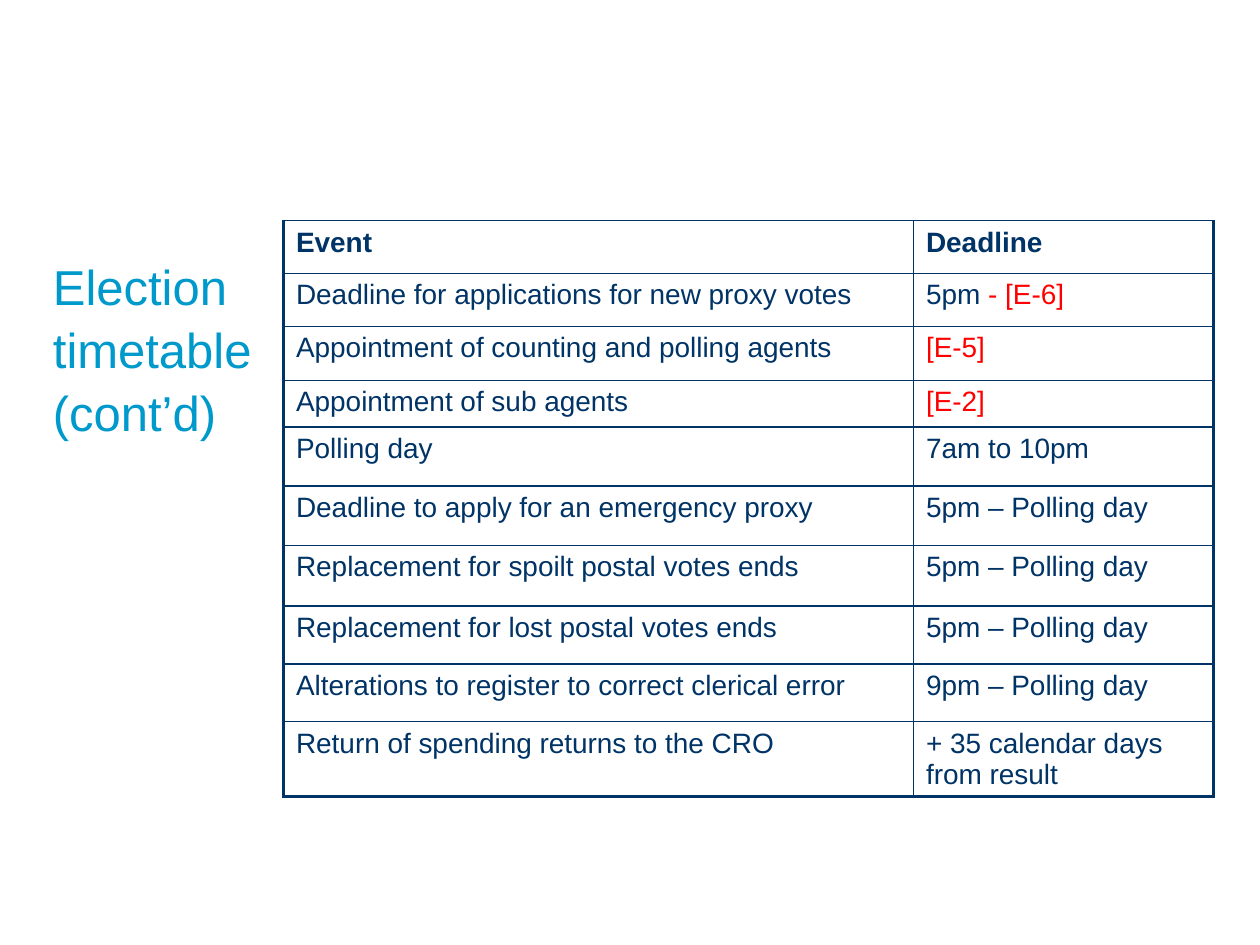
import pptx
import pptx.dml.color
import pptx.enum.text
import pptx.oxml
import pptx.oxml.ns
import pptx.util

Inches = pptx.util.Inches
Pt = pptx.util.Pt
NAVY, RED, CYAN = "003366", "FF0000", "0099CC"
COLS = [5, 2.38]
ROWS = [
    (0.42, "Event", [("Deadline", NAVY)]),
    (0.42, "Deadline for applications for new proxy votes", [("5pm ", NAVY), ("- [E-6]", RED)]),
    (0.43, "Appointment of counting and polling agents", [("[E-5]", RED)]),
    (0.37, "Appointment of sub agents", [("[E-2]", RED)]),
    (0.47, "Polling day", [("7am to 10pm", NAVY)]),
    (0.47, "Deadline to apply for an emergency proxy", [("5pm – Polling day", NAVY)]),
    (0.48, "Replacement for spoilt postal votes ends", [("5pm – Polling day", NAVY)]),
    (0.46, "Replacement for lost postal votes ends", [("5pm – Polling day", NAVY)]),
    (0.46, "Alterations to register to correct clerical error", [("9pm – Polling day", NAVY)]),
    (0.56, "Return of spending returns to the CRO", [("+ 35 calendar days from result", NAVY)]),
]


def shade(color, code):
    """Set a colour format from a hex string."""
    color.rgb = pptx.dml.color.RGBColor.from_string(code)


def assign(item, values):
    """Set each attribute of an item from a dict."""
    for name, value in values.items():
        setattr(item, name, value)


def write(para, runs, size, bold=False):
    """Add runs of (text, colour) to a paragraph."""
    for text, code in runs:
        run = para.add_run()
        run.text = text
        assign(run.font, {"name": "Arial", "size": Pt(size), "bold": bold})
        shade(run.font.color, code)


def edge(cell, widths):
    """Draw the cell borders, given their widths in points by side."""
    props = cell._tc.get_or_add_tcPr()
    for spot, (side, width) in enumerate(widths.items()):
        props.insert(spot, pptx.oxml.parse_xml(
            f'<a:ln{side} {pptx.oxml.ns.nsdecls("a")} w="{Pt(width)}">'
            f'<a:solidFill><a:srgbClr val="{NAVY}"/></a:solidFill></a:ln{side}>'))


def add_title(slide, left, top, width, height):
    """Place the slide title in the given box."""
    title = slide.shapes.title
    assign(title, {"left": Inches(left), "top": Inches(top),
                   "width": Inches(width), "height": Inches(height)})
    frame = title.text_frame
    assign(frame, {
        "margin_left": 0, "margin_top": 0, "margin_right": 0, "margin_bottom": 0,
        "word_wrap": True, "auto_size": pptx.enum.text.MSO_AUTO_SIZE.NONE,
        "vertical_anchor": pptx.enum.text.MSO_ANCHOR.TOP})
    para = frame.paragraphs[0]
    assign(para, {"alignment": pptx.enum.text.PP_ALIGN.LEFT, "line_spacing": 1.07})
    write(para, [("Election timetable (cont’d)", CYAN)], 28)


def add_dates(slide, left, top, width, height):
    """Place the table of events and deadlines in the given box."""
    table = slide.shapes.add_table(
        len(ROWS), len(COLS), Inches(left), Inches(top), Inches(width), Inches(height)).table
    assign(table, {"first_row": False, "horz_banding": False})
    for col, size in zip(table.columns, COLS):
        col.width = Inches(size)
    last = len(ROWS) - 1
    for r, (tall, event, due) in enumerate(ROWS):
        table.rows[r].height = Inches(tall)
        for c, runs in enumerate([[(event, NAVY)], due]):
            cell = table.cell(r, c)
            cell.fill.background()
            edge(cell, {"L": 1 if c else 2.25, "R": 2.25 if c else 1,
                        "T": 1, "B": 2.25 if r == last else 1})
            write(cell.text_frame.paragraphs[0], runs, 16, r == 0)


def main():
    """Build and save the slide."""
    deck = pptx.Presentation()
    assign(deck, {"slide_width": Inches(10), "slide_height": Inches(7.5)})
    slide = deck.slides.add_slide(deck.slide_layouts[5])
    add_title(slide, 0.42, 2, 2.15, 4.67)
    add_dates(slide, 2.25, 1.75, sum(COLS), sum(row[0] for row in ROWS))
    deck.save("out.pptx")


if __name__ == "__main__":
    main()
